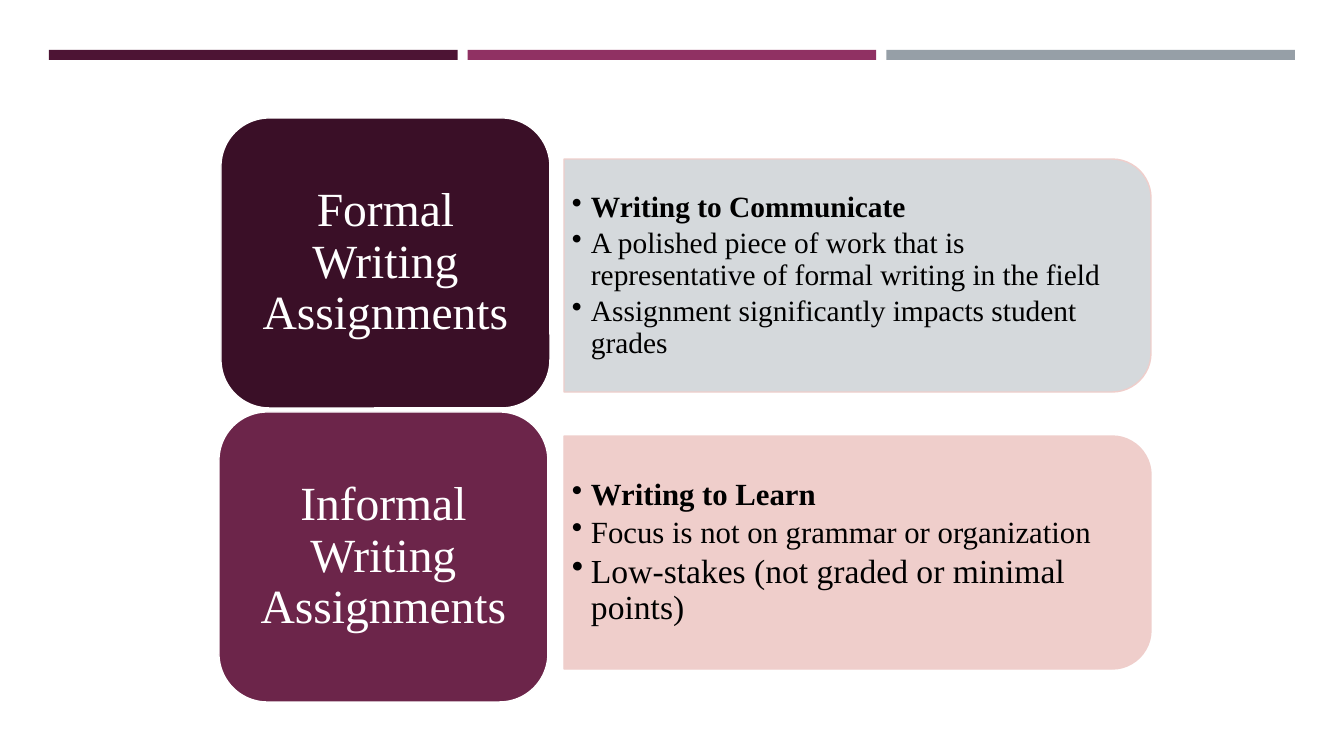
from dataclasses import dataclass

from lxml import etree
from pptx import Presentation
from pptx import util as u
from pptx.dml.color import RGBColor
from pptx.enum import shapes, text
from pptx.oxml import ns


@dataclass(frozen=True)
class Theme:
    """Colours, font and type sizes of the slide."""
    font: str = "Times New Roman"
    bars: tuple = ("4D1434", "903163", "969FA7")
    white: str = "FFFFFF"
    ink: str = "000000"
    formal_tile: str = "3A0F27"
    informal_tile: str = "6C254A"
    formal_panel: str = "D5D9DC"
    blush: str = "EFCECB"
    tile_size: int = 34
    formal_size: int = 21
    informal_size: int = 22
    stakes_size: int = 24


T = Theme()
SLIDE_W, SLIDE_H = 1344, 756
EMU_PER_PX = 12192000 / SLIDE_W
SHAPE = shapes.MSO_SHAPE


def px(n):
    """Turn pixels into EMU."""
    return u.Emu(round(n * EMU_PER_PX))


def add_block(slide, kind, box, fill, line=None):
    """Add a flat filled shape in the given box."""
    s = slide.shapes.add_shape(kind, *map(px, box))
    s.shadow.inherit = False
    s.fill.solid()
    s.fill.fore_color.rgb = RGBColor.from_string(fill)
    if line:
        s.line.color.rgb = RGBColor.from_string(line)
        s.line.width = u.Pt(1)
    else:
        s.line.fill.background()
    return s


def set_frame(tf, inset_x, inset_y):
    """Set wrapping, middle anchor and insets of a text frame."""
    values = {"word_wrap": True, "vertical_anchor": text.MSO_ANCHOR.MIDDLE,
              "margin_left": px(inset_x), "margin_right": px(inset_x),
              "margin_top": px(inset_y), "margin_bottom": px(inset_y)}
    for name, value in values.items():
        setattr(tf, name, value)


def write(p, words, size, color, bold=False):
    """Write one formatted run into a paragraph."""
    p.line_spacing = 0.9
    r = p.add_run()
    r.text = words
    for name, value in {"name": T.font, "size": u.Pt(size), "bold": bold}.items():
        setattr(r.font, name, value)
    r.font.color.rgb = RGBColor.from_string(color)


def add_bullet(p):
    """Give a paragraph a hanging round bullet."""
    pPr = p._p.get_or_add_pPr()
    pPr.set("marL", str(px(19)))
    pPr.set("indent", str(-px(19)))
    etree.SubElement(pPr, ns.qn("a:buChar")).set("char", "•")


def add_bars(slide, box):
    """Draw the row of three header bars."""
    x, y, w, h = box
    gap = 10
    bar_w = (w - gap * (len(T.bars) - 1)) / len(T.bars)
    for i, fill in enumerate(T.bars):
        add_block(slide, SHAPE.RECTANGLE, (x + i * (bar_w + gap), y, bar_w, h), fill)


def add_tile(slide, box, label, fill):
    """Draw a rounded tile with its centred label."""
    s = add_block(slide, SHAPE.ROUNDED_RECTANGLE, box, fill, T.white)
    set_frame(s.text_frame, 14, 7)
    p = s.text_frame.paragraphs[0]
    p.alignment = text.PP_ALIGN.CENTER
    write(p, label, T.tile_size, T.white)


def add_panel(slide, box, points, fill):
    """Draw a panel rounded on the right, with its bulleted points."""
    x, y, w, h = box
    turned = (x + (w - h) / 2, y + (h - w) / 2, h, w)
    s = add_block(slide, SHAPE.ROUND_2_SAME_RECTANGLE, turned, fill, T.blush)
    s.rotation = 90
    tf = slide.shapes.add_textbox(*map(px, (x, y + 12, w - 11, h - 23))).text_frame
    set_frame(tf, 8, 4)
    for i, (words, size) in enumerate(points):
        p = tf.add_paragraph() if i else tf.paragraphs[0]
        p.space_after = u.Pt(3)
        add_bullet(p)
        write(p, words, size, T.ink, bold=i == 0)


def build_slide(prs):
    """Build the comparison of formal and informal assignments."""
    slide = prs.slides.add_slide(prs.slide_layouts[6])
    add_bars(slide, (49, 50, 1246, 10))
    formal = [
        ("Writing to Communicate", T.formal_size),
        ("A polished piece of work that is representative of formal writing in the field",
         T.formal_size),
        ("Assignment significantly impacts student grades", T.formal_size),
    ]
    informal = [
        ("Writing to Learn", T.informal_size),
        ("Focus is not on grammar or organization", T.informal_size),
        ("Low-stakes (not graded or minimal points)", T.stakes_size),
    ]
    add_tile(slide, (221, 118, 329, 290), "Formal Writing Assignments", T.formal_tile)
    add_panel(slide, (564, 159, 587, 233), formal, T.formal_panel)
    add_tile(slide, (219, 412, 329, 290), "Informal Writing Assignments", T.informal_tile)
    add_panel(slide, (564, 436, 587, 233), informal, T.blush)


def main():
    """Create and save the presentation."""
    prs = Presentation()
    prs.slide_width, prs.slide_height = px(SLIDE_W), px(SLIDE_H)
    build_slide(prs)
    prs.save("out.pptx")


if __name__ == "__main__":
    main()
